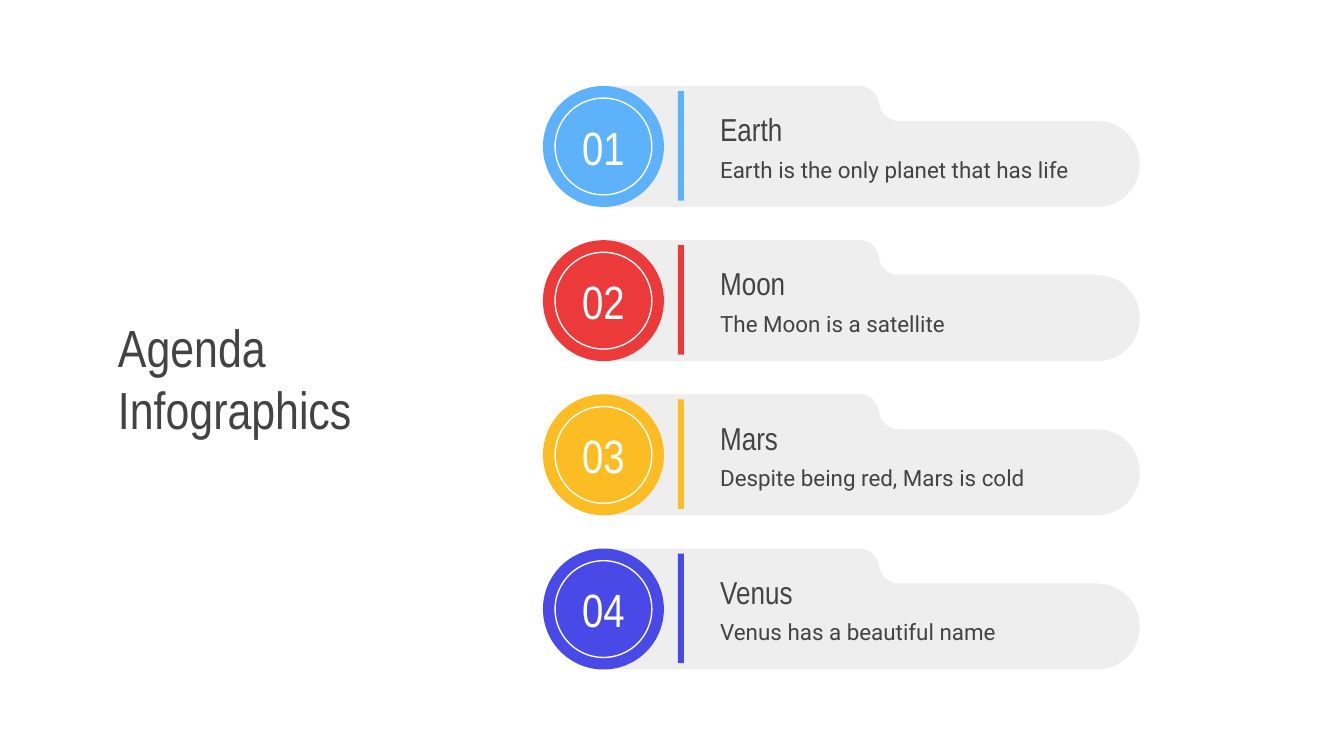
from dataclasses import dataclass
from typing import Any, NamedTuple

import pptx
import pptx.dml.color
import pptx.enum.shapes
import pptx.enum.text
import pptx.util

RGBColor = pptx.dml.color.RGBColor
Shape = pptx.enum.shapes.MSO_SHAPE
Align = pptx.enum.text.PP_ALIGN
Anchor = pptx.enum.text.MSO_ANCHOR

# The slide is a grid of 100 by 56.25 square cells.
COLUMNS, ROWS = 100, 56.25
CELL = pptx.util.Inches(10) // COLUMNS

INK = RGBColor(0x43, 0x43, 0x43)
FOLDER_GREY = RGBColor(0xEE, 0xEE, 0xEE)
WHITE = RGBColor(0xFF, 0xFF, 0xFF)
BLUE = RGBColor(0x5E, 0xB2, 0xFC)
RED = RGBColor(0xEC, 0x3A, 0x3B)
YELLOW = RGBColor(0xFC, 0xBD, 0x24)
INDIGO = RGBColor(0x49, 0x49, 0xE7)

FIRST_TOP, LAST_TOP = 6.4, 40.82
FOLDER_LEFT = 44.9
CURVE_STEPS = 16

Point = tuple[float, float]


class Box(NamedTuple):
    """Left, top, width and height in grid cells."""
    left: float
    top: float
    width: float
    height: float

    def below(self, top: float) -> "Box":
        return self._replace(top=self.top + top)

    def emu(self) -> list[int]:
        return [round(value * CELL) for value in self]


@dataclass(frozen=True)
class TextStyle:
    font: str
    size: float
    color: RGBColor = INK
    align: Any = Align.LEFT
    inset: float = 1
    wrap: bool = True


@dataclass(frozen=True)
class AgendaItem:
    heading: str
    detail: str
    color: RGBColor


TITLE = TextStyle("Arial Narrow", 28)
HEADING = TextStyle("Arial Narrow", 17)
DETAIL = TextStyle("Roboto", 12)
NUMBER = TextStyle("Arial Narrow", 25, WHITE, Align.CENTER, inset=0, wrap=False)

TITLE_BOX = Box(7.8, 23.5, 21.7, 9.2)
# Parts of one item, measured from the top of its row.
DISC = Box(40.4, 0, 9, 9)
RING = Box(41.3, 0.9, 7.2, 7.2)
BAR = Box(50.45, 0.38, 0.45, 8.15)
DETAIL_BOX = Box(52.6, 4.2, 29.8, 4)
HEADING_BOX = Box(52.6, 1.2, 13, 4)

AGENDA = [
    AgendaItem("Earth", "Earth is the only planet that has life", BLUE),
    AgendaItem("Moon", "The Moon is a satellite", RED),
    AgendaItem("Mars", "Despite being red, Mars is cold", YELLOW),
    AgendaItem("Venus", "Venus has a beautiful name", INDIGO),
]


def apply_format(target: Any, values: dict[str, Any]) -> None:
    for name, value in values.items():
        setattr(target, name, value)


def write(frame: Any, text: str, style: TextStyle) -> None:
    inset = round(style.inset * CELL)
    margins = {f"margin_{side}": inset for side in ("left", "top", "right", "bottom")}
    apply_format(frame, margins | {"word_wrap": style.wrap,
                                   "vertical_anchor": Anchor.MIDDLE})
    paragraph = frame.paragraphs[0]
    paragraph.alignment = style.align
    run = paragraph.add_run()
    run.text = text
    apply_format(run.font, {"name": style.font, "size": pptx.util.Pt(style.size)})
    run.font.color.rgb = style.color


def add_text(shapes: Any, box: Box, text: str, style: TextStyle) -> None:
    write(shapes.add_textbox(*box.emu()).text_frame, text, style)


def paint(shape: Any, color: RGBColor) -> None:
    shape.shadow.inherit = False
    shape.fill.solid()
    shape.fill.fore_color.rgb = color
    shape.line.fill.background()


def curve(start: Point, first: Point, second: Point, end: Point) -> list[Point]:
    """Points along a cubic Bézier curve, both ends included."""
    points = []
    for step in range(CURVE_STEPS + 1):
        t = step / CURVE_STEPS
        weights = ((1 - t) ** 3, 3 * t * (1 - t) ** 2, 3 * t * t * (1 - t), t ** 3)
        corners = (start, first, second, end)
        points.append((sum(w * x for w, (x, _) in zip(weights, corners)),
                       sum(w * y for w, (_, y) in zip(weights, corners))))
    return points


FOLDER_OUTLINE: list[Point] = [
    (0, 0), (0, 9),
    *curve((36.7, 9), (38.5, 9), (39.9, 7.6), (39.9, 5.8)),
    *curve((39.9, 5.8), (39.9, 4), (38.5, 2.6), (36.7, 2.6)),
    *curve((22, 2.6), (21.2, 2.6), (20.6, 2), (20.5, 1.3)),
    *curve((20.5, 1.3), (20.4, 0.6), (19.8, 0), (19.1, 0)),
]


def add_folder(shapes: Any, top: float) -> None:
    corners = [(round((FOLDER_LEFT + x) * CELL), round((top + y) * CELL))
               for x, y in FOLDER_OUTLINE]
    builder = shapes.build_freeform(*corners[0])
    builder.add_line_segments(corners[1:], close=True)
    paint(builder.convert_to_shape(), FOLDER_GREY)


def add_ring(shapes: Any, box: Box, number: int) -> None:
    ring = shapes.add_shape(Shape.OVAL, *box.emu())
    ring.shadow.inherit = False
    ring.fill.background()
    ring.line.color.rgb = WHITE
    ring.line.width = pptx.util.Pt(0.75)
    write(ring.text_frame, f"{number:02}", NUMBER)


def add_item(slide: Any, item: AgendaItem, number: int, top: float) -> None:
    shapes = slide.shapes.add_group_shape().shapes
    add_folder(shapes, top)
    for preset, box in ((Shape.OVAL, DISC), (Shape.RECTANGLE, BAR)):
        paint(shapes.add_shape(preset, *box.below(top).emu()), item.color)
    add_text(shapes, DETAIL_BOX.below(top), item.detail, DETAIL)
    add_text(shapes, HEADING_BOX.below(top), item.heading, HEADING)
    add_ring(shapes, RING.below(top), number)


def main() -> None:
    deck = pptx.Presentation()
    apply_format(deck, {"slide_width": COLUMNS * CELL,
                        "slide_height": round(ROWS * CELL)})
    slide = deck.slides.add_slide(deck.slide_layouts[6])
    add_text(slide.shapes, TITLE_BOX, "Agenda Infographics", TITLE)
    pitch = (LAST_TOP - FIRST_TOP) / (len(AGENDA) - 1)
    for index, item in enumerate(AGENDA):
        add_item(slide, item, index + 1, FIRST_TOP + index * pitch)
    deck.save("out.pptx")


if __name__ == "__main__":
    main()
